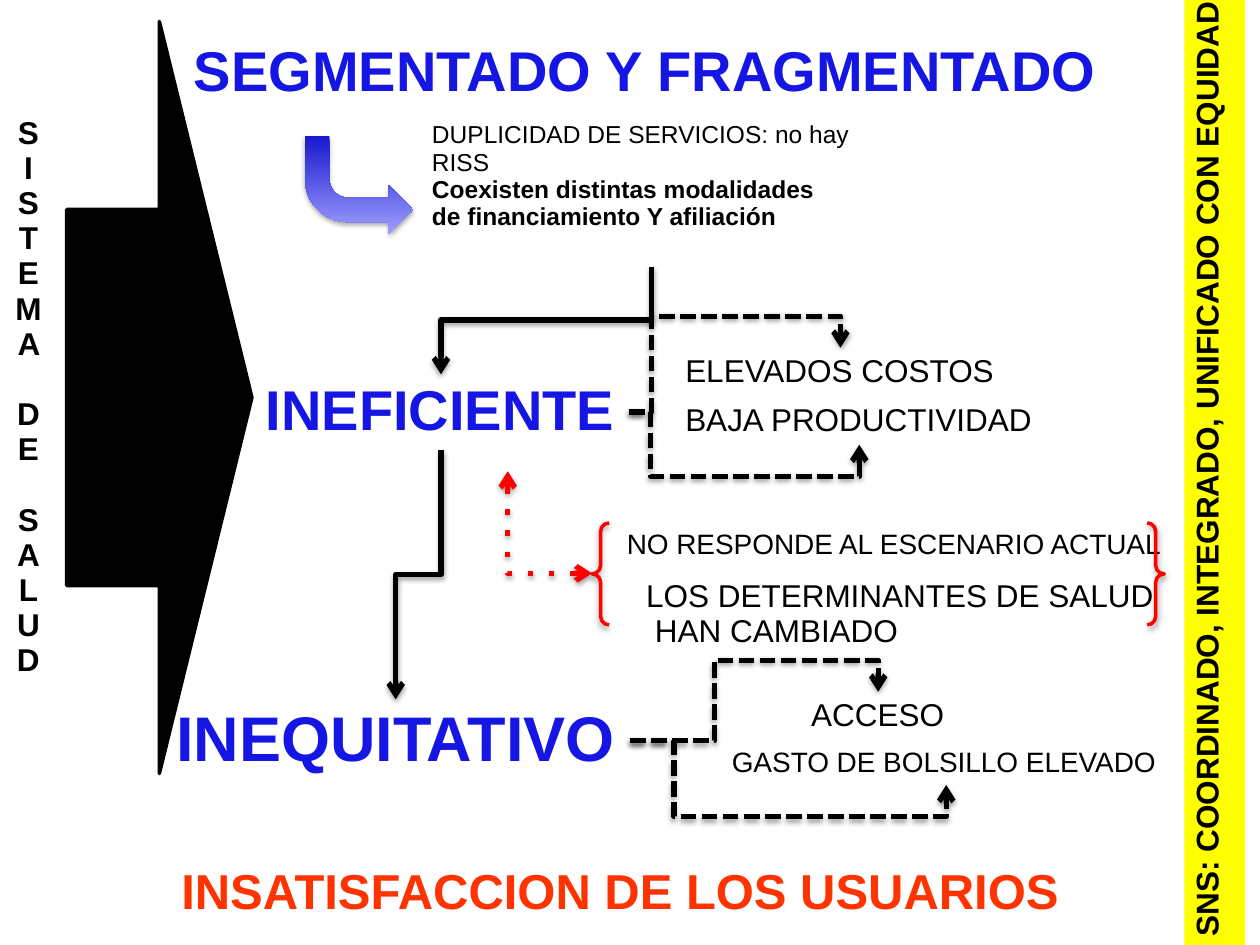
import pptx
import pptx.util
import pptx.dml.color
import pptx.enum.shapes
import pptx.enum.text
import pptx.oxml
from pptx.oxml.ns import qn
import lxml.etree

RGBColor = pptx.dml.color.RGBColor
SHAPE = pptx.enum.shapes.MSO_SHAPE
ALIGN = pptx.enum.text.PP_ALIGN
BLACK = RGBColor(0x00, 0x00, 0x00)
BLUE = RGBColor(0x16, 0x16, 0xE4)
DEEP_BLUE = RGBColor(0x18, 0x18, 0xCE)
PALE_BLUE = RGBColor(0x9F, 0x9F, 0xFF)
RED = RGBColor(0xFF, 0x00, 0x00)
ORANGE = RGBColor(0xFF, 0x33, 0x00)
YELLOW = RGBColor(0xFF, 0xFF, 0x00)

PX = 9144  # 100 px to the inch
LEFT, CENTER = ALIGN.LEFT, ALIGN.CENTER

# Content: lines, box, size, colour, bold lines from index, alignment
TITLE = (["SEGMENTADO Y FRAGMENTADO"], (141, 28, 742, 60), 32, BLUE, 0, CENTER)
HEADINGS = [
    (["INEFICIENTE"], (200, 297, 299, 60), 32, BLUE, 0, CENTER),
    (["INEQUITATIVO"], (128, 555, 372, 66), 36, BLUE, 0, CENTER),
    (["INSATISFACCION DE LOS USUARIOS"], (130, 682, 724, 54), 28, ORANGE, 0, CENTER),
]
DETAILS = [
    (["ELEVADOS COSTOS"], (534, 276, 268, 38), 18, BLACK, 1, LEFT),
    (["BAJA PRODUCTIVIDAD"], (534, 315, 298, 38), 18, BLACK, 1, LEFT),
    (["NO RESPONDE AL ESCENARIO ACTUAL"], (485, 415, 449, 35), 16, BLACK, 1, CENTER),
    (["LOS DETERMINANTES DE SALUD", " HAN CAMBIADO"], (503, 455, 427, 66), 18, BLACK, 2, LEFT),
    (["ACCESO"], (634, 549, 127, 38), 18, BLACK, 1, LEFT),
    (["GASTO DE BOLSILLO ELEVADO"], (571, 588, 361, 35), 16, BLACK, 1, LEFT),
]
SERVICES = (["DUPLICIDAD DE SERVICIOS: no hay RISS", "Coexisten distintas modalidades",
             "de financiamiento Y afiliación"], (333, 92, 368, 120), 14, BLACK, 1, LEFT)
SYSTEM = (["SISTEMA DE SALUD"], (-3, 30, 51, 571), 18, BLACK, 0, CENTER)
BANNER = (["SNS: COORDINADO, INTEGRADO, UNIFICADO CON EQUIDAD"],
          (940, -6, 48, 759), 18, BLACK, 0, LEFT)

# Solid paths leave downwards: begin, end, height of the bend
DOWN_PATHS = [((517, 212), (350, 297), 254), ((350, 357), (314, 555), 456)]
# Dashed paths leave to the right: begin, end, corner
SIDE_PATHS = [
    ((499, 327), (667, 276), (517, 251)),
    ((499, 327), (682, 353), (516, 378)),
    ((500, 588), (697, 549), (567, 524)),
    ((500, 588), (751, 623), (535, 648)),
]
SCENARIO_PATH = ((403, 374), (470, 455))


def emu(values):
    return [value * PX for value in values]


def add_child(parent, tag, **attributes):
    child = lxml.etree.SubElement(parent, qn(tag))
    for name, value in attributes.items():
        child.set(name, str(value))
    return child


def add_shadow(properties, distance=1.6, opacity=38):
    effects = properties.find(qn("a:effectLst"))
    if effects is None:
        effects = add_child(properties, "a:effectLst")
    shadow = add_child(effects, "a:outerShdw", blurRad=pptx.util.Pt(3.1),
                       dist=pptx.util.Pt(distance), dir=5400000, rotWithShape=0)
    colour = add_child(shadow, "a:srgbClr", val=BLACK)
    add_child(colour, "a:alpha", val=opacity * 1000)


def write_text(shape, content, wrap=False, direction=None):
    lines, box, size, colour, bold_from, alignment = content
    shape.left, shape.top, shape.width, shape.height = emu(box)
    frame = shape.text_frame
    frame.text = "\n".join(lines)
    frame.word_wrap = wrap
    frame.auto_size = pptx.enum.text.MSO_AUTO_SIZE.SHAPE_TO_FIT_TEXT
    frame.vertical_anchor = pptx.enum.text.MSO_ANCHOR.TOP
    if direction:
        frame._txBody.bodyPr.set("vert", direction)
    for index, paragraph in enumerate(frame.paragraphs):
        paragraph.alignment = alignment
        paragraph.line_spacing = 0.93
        paragraph.font.name = "Arial"
        paragraph.font.size = pptx.util.Pt(size)
        paragraph.font.bold = index >= bold_from
        paragraph.font.color.rgb = colour


def add_text(slide, content, **options):
    write_text(slide.shapes.add_textbox(*emu(content[1])), content, **options)


def add_plain_shape(slide, kind, box, fill=None, line=None):
    shape = slide.shapes.add_shape(kind, *emu(box))
    shape.shadow.inherit = False
    if fill is None:
        shape.fill.background()
    else:
        shape.fill.solid()
        shape.fill.fore_color.rgb = fill
    if line is None:
        shape.line.fill.background()
    else:
        shape.line.color.rgb = line
        shape.line.width = pptx.util.Pt(2)
    return shape


def add_path(slide, begin, end, bends, colour=BLACK, dash=None, downwards=False, two_heads=False):
    """Draw an elbow; bends are shares of the way from begin to end."""
    kind = pptx.enum.shapes.MSO_CONNECTOR.ELBOW
    connector = slide.shapes.add_connector(kind, *emu(begin), *emu(end))
    properties = connector._element.spPr
    if downwards:  # a turned frame has its sides swapped about the same centre
        (x1, y1), (x2, y2) = begin, end
        width, height = abs(y2 - y1), abs(x2 - x1)
        connector.left = round((x1 + x2 - width) / 2 * PX)
        connector.top = round((y1 + y2 - height) / 2 * PX)
        connector.width, connector.height = width * PX, height * PX
        frame = properties.find(qn("a:xfrm"))
        to_right = x2 > x1
        frame.set("rot", str((270 if to_right else 90) * 60000))
        frame.set("flipH", str(int(to_right)))
    geometry = properties.find(qn("a:prstGeom"))
    geometry.set("prst", f"bentConnector{len(bends) + 2}")
    guides = geometry.find(qn("a:avLst"))
    for number, share in enumerate(bends, 1):
        add_child(guides, "a:gd", name=f"adj{number}", fmla=f"val {round(share * 100000)}")
    connector.line.color.rgb = colour
    connector.line.width = pptx.util.Pt(3)
    line = properties.find(qn("a:ln"))
    if dash:
        add_child(line, "a:prstDash", val=dash)
    if two_heads:
        add_child(line, "a:headEnd", type="arrow")
    add_child(line, "a:tailEnd", type="arrow")
    add_shadow(properties)


def main():
    presentation = pptx.Presentation()
    presentation.slide_width, presentation.slide_height = emu((1000, 750))
    slide = presentation.slides.add_slide(presentation.slide_layouts[5])

    # Title and system arrow
    write_text(slide.shapes.title, TITLE)
    add_plain_shape(slide, SHAPE.RIGHT_ARROW, (53, 17, 147, 597), BLACK, BLACK)
    add_text(slide, SYSTEM, wrap=True, direction="wordArtVert")

    # Headings and details
    for content in HEADINGS + DETAILS:
        add_text(slide, content)
    add_text(slide, SERVICES, wrap=True)

    # Bent arrow to the services
    bent_arrow = add_plain_shape(slide, SHAPE.BENT_ARROW, (242, 108, 86, 78))
    bent_arrow.rotation = 180
    bent_arrow._element.spPr.find(qn("a:xfrm")).set("flipH", "1")
    bent_arrow.fill.gradient()
    bent_arrow.fill.gradient_angle = 90
    for stop, colour in zip(bent_arrow.fill.gradient_stops, (DEEP_BLUE, PALE_BLUE)):
        stop.color.rgb = colour
    add_shadow(bent_arrow._element.spPr, 1.8, 35)

    # Paths between the ideas
    for begin, end, bend in DOWN_PATHS:
        share = (bend - begin[1]) / (end[1] - begin[1])
        add_path(slide, begin, end, [share], downwards=True)
    for begin, end, corner in SIDE_PATHS:
        shares = [(c - b) / (e - b) for b, e, c in zip(begin, end, corner)]
        add_path(slide, begin, end, shares, dash="sysDash")

    # Braces around the scenario
    braces = add_plain_shape(slide, SHAPE.DOUBLE_BRACE, (470, 415, 454, 81), line=RED)
    add_shadow(braces._element.spPr)
    add_path(slide, *SCENARIO_PATH, [], RED, "dot", downwards=True, two_heads=True)

    # Side banner
    banner = add_plain_shape(slide, SHAPE.RECTANGLE, BANNER[1], YELLOW)
    write_text(banner, BANNER, direction="vert270")

    presentation.save("out.pptx")


if __name__ == "__main__":
    main()
